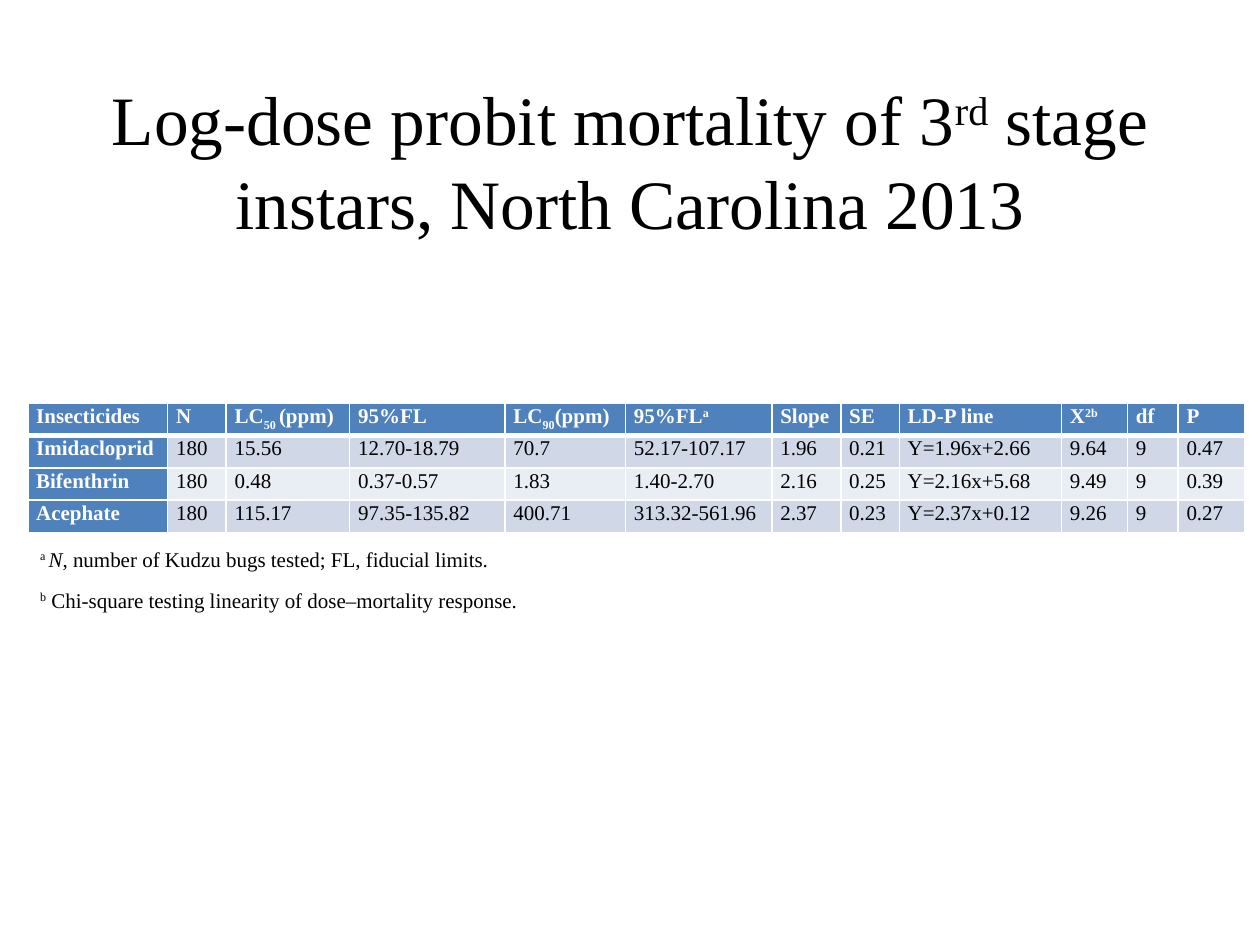
from lxml import etree
from pptx import Presentation
from pptx.dml.color import RGBColor
from pptx.enum.text import MSO_ANCHOR, MSO_AUTO_SIZE, PP_ALIGN
from pptx.oxml.ns import qn
from pptx.util import Cm, Pt

CENTER, JUSTIFY, LEFT = PP_ALIGN.CENTER, PP_ALIGN.JUSTIFY, PP_ALIGN.LEFT
MIDDLE, TOP = MSO_ANCHOR.MIDDLE, MSO_ANCHOR.TOP
FIXED = MSO_AUTO_SIZE.NONE

THEME = {
    "font": "Times New Roman", "title": 39.6, "body": 12,
    "ink": "000000", "white": "FFFFFF", "head": "4F81BD",
    "bands": ("D0D8E8", "E9EDF4"),
}
SUP, SUB = 30, -25

TITLE = [("Log-dose probit mortality of 3",), ("rd", SUP),
         (" stage instars, North Carolina 2013",)]
HEADS = [
    "Insecticides", "N", [("LC",), ("50 ", SUB), ("(ppm)",)], "95%FL",
    [("LC",), ("90", SUB), ("(ppm)",)], [("95%FL",), ("a", SUP)],
    "Slope", "SE", "LD-P line", [("X",), ("2b", SUP)], "df", "P",
]
ROWS = [
    ["Imidacloprid", "180", "15.56", "12.70-18.79", "70.7", "52.17-107.17",
     "1.96", "0.21", "Y=1.96x+2.66", "9.64", "9", "0.47"],
    ["Bifenthrin", "180", "0.48", "0.37-0.57", "1.83", "1.40-2.70",
     "2.16", "0.25", "Y=2.16x+5.68", "9.49", "9", "0.39"],
    ["Acephate", "180", "115.17", "97.35-135.82", "400.71", "313.32-561.96",
     "2.37", "0.23", "Y=2.37x+0.12", "9.26", "9", "0.27"],
]
NOTES = [
    [("a ", SUP), ("N", 0, True),
     (", number of Kudzu bugs tested; FL, fiducial limits.",)],
    [("b", SUP), (" Chi-square testing linearity of dose–mortality response.",)],
]
WIDTHS = [2.82, 1.18, 2.49, 3.13, 2.43, 2.95, 1.39, 1.18, 3.27, 1.33, 1.02, 1.34]
ROW = 0.65
PLACES = {
    "title": (1.27, 1.63, 22.86, 3.18),
    "table": (0.56, 8.13, sum(WIDTHS), ROW * (len(ROWS) + 1)),
    "notes": (0.56, 10.85, 17.78, 1.6),
}
BODY = {"line_spacing": 1.07, "space_after": Pt(8)}
CELL = {"margin_left": Cm(0.17), "margin_right": Cm(0.17),
        "margin_top": 0, "margin_bottom": 0, "vertical_anchor": TOP}


def place(name):
    return [Cm(n) for n in PLACES[name]]


def apply(item, form):
    for key, value in form.items():
        setattr(item, key, value)


def write(para, parts, size, color, form, bold=False):
    apply(para, form)
    for text, base, slant in ((*p, 0, False)[:3] if len(p) < 3 else p for p in parts):
        run = para.add_run()
        run.text = text
        apply(run.font, {"name": THEME["font"], "size": Pt(size),
                         "bold": bold, "italic": slant})
        run.font.color.rgb = RGBColor.from_string(color)
        if base:
            run.font._element.set("baseline", str(base * 1000))


def edge(cell, side, width):
    line = etree.Element(qn("a:" + side), w=str(Pt(width)))
    fill = etree.SubElement(line, qn("a:solidFill"))
    etree.SubElement(fill, qn("a:srgbClr"), val=THEME["white"])
    return line


def paint(cell, color, sides):
    cell.fill.solid()
    cell.fill.fore_color.rgb = RGBColor.from_string(color)
    props = cell._tc.get_or_add_tcPr()
    for spot, (side, width) in enumerate(sides.items()):
        props.insert(spot, edge(cell, side, width))


def add_title(slide):
    title = slide.shapes.title
    apply(title, dict(zip(("left", "top", "width", "height"), place("title"))))
    apply(title.text_frame, {"word_wrap": True, "auto_size": FIXED,
                             "vertical_anchor": MIDDLE})
    write(title.text_frame.paragraphs[0], TITLE, THEME["title"], THEME["ink"],
          {"alignment": CENTER})


def add_grid(slide):
    data = [HEADS, *ROWS]
    grid = slide.shapes.add_table(len(data), len(HEADS), *place("table")).table
    for col, width in zip(grid.columns, WIDTHS):
        col.width = Cm(width)
    for r, line in enumerate(data):
        grid.rows[r].height = Cm(ROW)
        sides = {"lnL": 1, "lnR": 1, "lnT": 3 if r == 1 else 1,
                 "lnB": 3 if r == 0 else 1}
        for c, value in enumerate(line):
            cell = grid.cell(r, c)
            head = r == 0 or c == 0
            apply(cell, CELL)
            paint(cell, THEME["head"] if head else THEME["bands"][(r - 1) % 2], sides)
            parts = [(value,)] if isinstance(value, str) else value
            write(cell.text_frame.paragraphs[0], parts, THEME["body"],
                  THEME["white" if head else "ink"],
                  {**BODY, "alignment": LEFT}, head)


def add_notes(slide):
    frame = slide.shapes.add_textbox(*place("notes")).text_frame
    frame.word_wrap = True
    for n, parts in enumerate(NOTES):
        para = frame.add_paragraph() if n else frame.paragraphs[0]
        write(para, parts, THEME["body"], THEME["ink"],
              {**BODY, "alignment": JUSTIFY})


def main():
    deck = Presentation()
    apply(deck, {"slide_width": Cm(25.4), "slide_height": Cm(19.05)})
    slide = deck.slides.add_slide(deck.slide_layouts[5])
    add_title(slide)
    add_grid(slide)
    add_notes(slide)
    deck.save("out.pptx")


if __name__ == "__main__":
    main()
